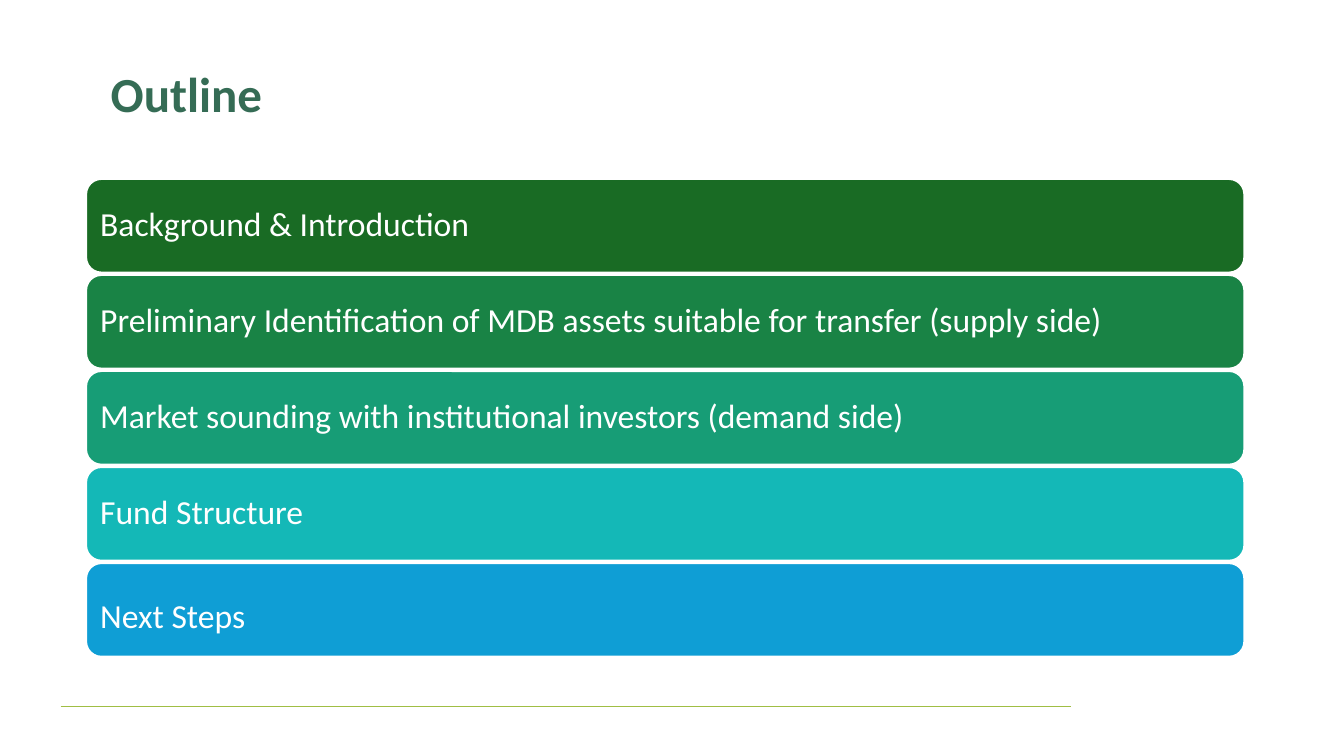
import pptx
import pptx.util
import pptx.dml.color
import pptx.enum.shapes
import pptx.enum.text
import lxml.etree
from dataclasses import dataclass
from pptx.util import Cm


@dataclass(frozen=True)
class Theme:
    font: str = "Calibri"
    white: str = "FFFFFF"
    title: str = "356C55"
    rule: str = "A0BE44"
    title_size: int = 35
    bar_size: int = 24


THEME = Theme()

# Bar text, fill and extra top inset in cm
TOPICS = [
    ("Background & Introduction", "196B24", 0),
    ("Preliminary Identification of MDB assets suitable for transfer (supply side)",
     "198345", 0),
    ("Market sounding with institutional investors (demand side)", "179D76", 0),
    ("Fund Structure", "14B8B7", 0),
    ("Next Steps", "0F9ED5", 0.4),
]
BAR_TOP, BAR_PITCH = 4.5, 2.42


def rgb(value):
    return pptx.dml.color.RGBColor.from_string(value)


def add_text(sp, text, size, color, bold=False):
    tf = sp.text_frame
    tf.word_wrap = True
    tf.vertical_anchor = pptx.enum.text.MSO_ANCHOR.MIDDLE
    p = tf.paragraphs[0]
    p.alignment = pptx.enum.text.PP_ALIGN.LEFT
    p.line_spacing = 0.9
    r = p.add_run()
    r.text = text
    r.font.name = THEME.font
    r.font.size = pptx.util.Pt(size)
    r.font.bold = bold
    r.font.color.rgb = rgb(color)


def add_title(s, text):
    sp = s.shapes.add_textbox(Cm(2.54), Cm(1.14), Cm(29.21), Cm(2.59))
    add_text(sp, text, THEME.title_size, THEME.title, bold=True)


def add_bar(s, top, text, fill, extra_inset):
    sp = s.shapes.add_shape(pptx.enum.shapes.MSO_SHAPE.ROUNDED_RECTANGLE,
                            Cm(2.16), Cm(top), Cm(29.21), Cm(2.38))
    sp.shadow.inherit = False
    sp.fill.solid()
    sp.fill.fore_color.rgb = rgb(fill)
    sp.line.color.rgb = rgb(THEME.white)
    sp.line.width = pptx.util.Pt(2)
    add_text(sp, text, THEME.bar_size, THEME.white)
    tf = sp.text_frame
    tf.margin_left = tf.margin_right = tf.margin_bottom = Cm(0.25)
    tf.margin_top = Cm(0.25 + extra_inset)


def add_rule(s):
    line = s.shapes.add_connector(pptx.enum.shapes.MSO_CONNECTOR.STRAIGHT,
                                  Cm(1.53), Cm(17.8), Cm(27), Cm(17.8))
    line.line.color.rgb = rgb(THEME.rule)
    line.line.width = pptx.util.Pt(0.6)
    # Empty effect list removes the theme shadow
    sp_pr = line._element.spPr
    lxml.etree.SubElement(sp_pr, pptx.oxml.ns.qn("a:effectLst"))


def main():
    prs = pptx.Presentation()
    prs.slide_width, prs.slide_height = Cm(33.87), Cm(19.05)
    s = prs.slides.add_slide(prs.slide_layouts[6])

    # Footer rule
    add_rule(s)

    # Stacked topics
    for i, (text, fill, extra_inset) in enumerate(TOPICS):
        add_bar(s, BAR_TOP + i * BAR_PITCH, text, fill, extra_inset)

    # Title
    add_title(s, "Outline")

    prs.save("out.pptx")


if __name__ == "__main__":
    main()
